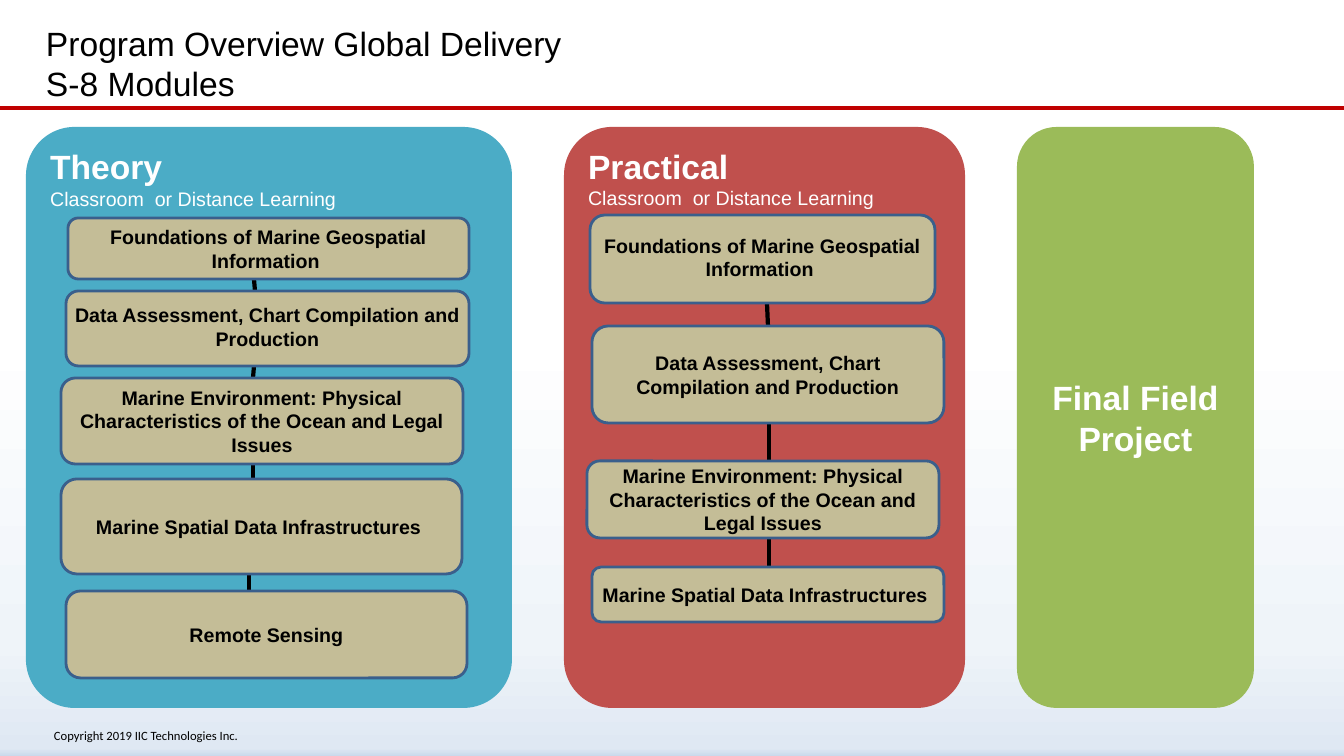
"""Build the programme overview slide: theory, practical and final project."""
from lxml import etree
from pptx import Presentation
from pptx.dml.color import RGBColor
from pptx.enum.shapes import MSO_CONNECTOR, MSO_SHAPE
from pptx.enum.text import MSO_ANCHOR, PP_ALIGN
from pptx.oxml.ns import qn
from pptx.util import Pt

ROUNDED = MSO_SHAPE.ROUNDED_RECTANGLE
STRAIGHT = MSO_CONNECTOR.STRAIGHT
TOP, MIDDLE = MSO_ANCHOR.TOP, MSO_ANCHOR.MIDDLE
LEFT, CENTER = PP_ALIGN.LEFT, PP_ALIGN.CENTER

SCALE = 914400 / 100.8
COLORS = {
    "black": "000000", "white": "FFFFFF", "rule": "C00000",
    "theory": "4BACC6", "practical": "C0504D", "project": "9BBB59",
    "module": "C4BD97", "outline": "3A5F8C",
}
BACKGROUND = [(0, "FFFFFF"), (44, "FFFFFF"), (85, "EFF4F9"),
              (99, "DFE8F3"), (100, "CAD9EB")]

TITLE = "Program Overview Global Delivery\vS-8 Modules"
COPYRIGHT = "Copyright 2019 IIC Technologies Inc."
DELIVERY = "Classroom  or Distance Learning"
PROJECT = "Final Field Project"
FOUNDATIONS = "Foundations of Marine Geospatial Information "
ASSESSMENT = "Data Assessment, Chart Compilation and Production"
ENVIRONMENT = "Marine Environment: Physical Characteristics of the Ocean and Legal Issues"
INFRASTRUCTURES = "Marine Spatial Data Infrastructures "

PANEL_TOP, PANEL_HEIGHT = 127, 581
TRACKS = [
    {"name": "Theory", "color": "theory", "left": 26, "width": 486, "corner": 0.1,
     "modules": [(FOUNDATIONS, (68, 218, 401, 61), 0),
                 (ASSESSMENT, (66, 291, 403, 75), 4),
                 (ENVIRONMENT, (61, 378, 402, 86), 0),
                 (INFRASTRUCTURES, (61, 479, 401, 95), 0),
                 ("Remote Sensing", (66, 591, 401, 87), 0)],
     "link_ends": [(254, 255), (254, 253), (253, 253), (249, 249)]},
    {"name": "Practical", "color": "practical", "left": 564, "width": 401, "corner": 0.12,
     "modules": [(FOUNDATIONS, (590, 215, 345, 88), 4),
                 (ASSESSMENT, (592, 326, 352, 97), 0),
                 (ENVIRONMENT, (587, 461, 352, 77), 0),
                 (INFRASTRUCTURES, (592, 567, 352, 55), 0)],
     "link_ends": [(767, 768), (769, 769), (769, 769)]},
]


def px(length):
    return round(length * SCALE)


def rgb(name):
    return RGBColor.from_string(COLORS[name])


def write(box, lines, color="black", font="Arial", align=LEFT, anchor=TOP,
          wrap=True, insets=(10, 5, 10, 5)):
    frame = box.text_frame
    frame.word_wrap = wrap
    frame.vertical_anchor = anchor
    (frame.margin_left, frame.margin_top,
     frame.margin_right, frame.margin_bottom) = map(px, insets)
    for index, (text, size, bold) in enumerate(lines):
        para = frame.add_paragraph() if index else frame.paragraphs[0]
        para.text = text
        para.alignment = align
        for span in para.runs:
            span.font.name = font
            span.font.size = Pt(size)
            span.font.bold = bold
            span.font.color.rgb = rgb(color)


def add_box(slide, place, color, corner=0.167, outline=None):
    box = slide.shapes.add_shape(ROUNDED, *map(px, place))
    box.shadow.inherit = False
    box.adjustments[0] = corner
    box.fill.solid()
    box.fill.fore_color.rgb = rgb(color)
    if outline:
        box.line.color.rgb = rgb(outline)
        box.line.width = Pt(2)
    else:
        box.line.fill.background()
    return box


def add_line(slide, ends, color, width):
    line = slide.shapes.add_connector(STRAIGHT, *map(px, ends))
    line.line.color.rgb = rgb(color)
    line.line.width = Pt(width)
    etree.SubElement(line.element.spPr, qn("a:effectLst"))


def paint_background(slide):
    fill = slide.background.fill
    fill.gradient()
    fill.gradient_angle = 270
    stops = slide.element.find(".//" + qn("a:gsLst"))
    for stop in list(stops):
        stops.remove(stop)
    for percent, color in BACKGROUND:
        stop = etree.SubElement(stops, qn("a:gs"), pos=str(percent * 1000))
        etree.SubElement(stop, qn("a:srgbClr"), val=color)


def add_track(slide, track):
    panel = add_box(slide, (track["left"], PANEL_TOP, track["width"], PANEL_HEIGHT),
                    track["color"], track["corner"])
    write(panel, [(track["name"], 24, True), (DELIVERY, 14, False)], color="white")
    modules = track["modules"]
    for upper, lower, (start, end) in zip(modules, modules[1:], track["link_ends"]):
        bottom = upper[1][1] + upper[1][3]
        add_line(slide, (start, bottom, end, lower[1][1]), "black", 3)
    for text, place, lift in modules:
        box = add_box(slide, place, "module", outline="outline")
        write(box, [(text, 14, True)], align=CENTER, anchor=MIDDLE,
              insets=(2, 1, 2, 1 + lift))


def main():
    deck = Presentation()
    deck.slide_width, deck.slide_height = px(1344), px(756)
    slide = deck.slides.add_slide(deck.slide_layouts[6])
    paint_background(slide)
    add_line(slide, (0, 108, 1344, 108), "rule", 2.25)
    footer = slide.shapes.add_textbox(*map(px, (44, 723, 207, 25)))
    write(footer, [(COPYRIGHT, 9, False)], font="Calibri", wrap=False)
    for track in TRACKS:
        add_track(slide, track)
    title = slide.shapes.add_textbox(*map(px, (36, 18, 672, 92)))
    write(title, [(TITLE, 24, False)])
    project = add_box(slide, (1017, PANEL_TOP, 237, PANEL_HEIGHT), "project")
    write(project, [(PROJECT, 24, True)], color="white", align=CENTER, anchor=MIDDLE)
    deck.save("out.pptx")


if __name__ == "__main__":
    main()
